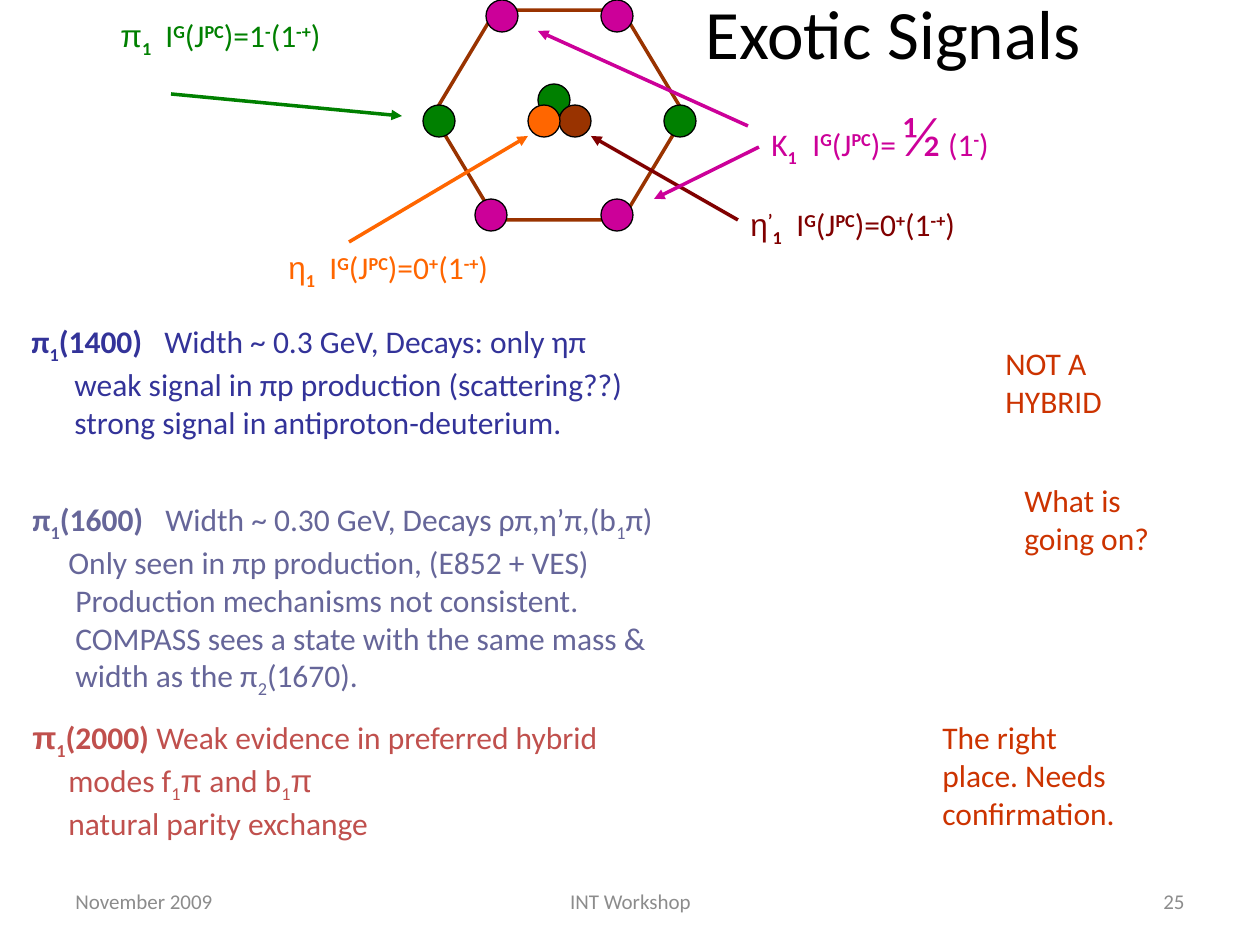
from lxml.etree import SubElement
from pptx import Presentation
from pptx.dml.color import RGBColor
from pptx.enum.shapes import MSO_CONNECTOR as Connector, MSO_SHAPE as Shape
from pptx.enum.text import MSO_ANCHOR as Anchor, MSO_AUTO_SIZE as Fit, PP_ALIGN as Align
from pptx.oxml.ns import qn
from pptx.util import Emu, Pt

PX = 7257
GREEN, MAROON, BROWN, ORANGE, MAGENTA = "008000", "800000", "993300", "FF6600", "CC0099"
NAVY, SLATE, BRICK, RED, GREY = "333399", "666699", "C0504D", "CC3300", "8C8C8C"

# Run styles: b bold, + superscript, - subscript, a Arial, L large.
TITLE = ("Exotic Signals", (636, 0, 514, 64))
FOOTERS = [
    ("November 2009", (63, 876, 294, 50), Align.LEFT),
    ("INT Workshop", (431, 876, 399, 50), Align.CENTER),
    ("25", (903, 876, 294, 50), Align.RIGHT),
]
MULTIPLETS = [
    ((108, 10, 364, 63), GREEN, 45, [("π", "a"), ("1", "b-")],
     [("1", ""), ("-", "b+")], "-+"),
    ((738, 199, 392, 63), MAROON, 46, [("η", "a"), ("’", "b+"), ("1", "b-")],
     [("0", ""), ("+", "b+")], "-+"),
    ((276, 242, 386, 63), ORANGE, 41, [("η", "a"), ("1", "b-")],
     [("0", ""), ("+", "b+")], "-+"),
    ((759, 94, 375, 79), MAGENTA, 41, [("K", ""), ("1", "b-")],
     [(" ", ""), ("½", "L"), (" ", "")], "-"),
]
HEXAGON = (433, 10, 252, 210)
DOT = 32
DOTS = [
    (601, 199, MAGENTA), (423, 105, GREEN), (538, 84, GREEN),
    (664, 105, GREEN), (559, 105, BROWN), (528, 105, ORANGE),
    (486, 0, MAGENTA), (601, 0, MAGENTA), (475, 199, MAGENTA),
]
ARROWS = [
    ((738, 220), (591, 136), MAROON),
    ((349, 242), (528, 136), ORANGE),
    ((759, 147), (654, 199), MAGENTA),
    ((748, 126), (538, 31), MAGENTA),
    ((171, 94), (402, 116), GREEN),
]
FINDINGS = [
    ((19, 316, 932, 164), NAVY, [
        (0, 133, [("π", "b"), ("1", "b-"), ("(1400)", "b"),
                  ("\tWidth ~ 0.3 GeV, Decays: only ηπ", "")]),
        (43, 0, [("weak signal in πp production (scattering??)", "")]),
        (43, 0, [("strong signal in antiproton-deuterium.", "")]),
    ]),
    ((20, 494, 666, 204), SLATE, [
        (0, 133, [("π", "b"), ("1", "b-"), ("(1600)", "b"),
                  ("\tWidth ~ 0.30 GeV, Decays ρπ,η’π,(b", ""), ("1", "-"), ("π)", "")]),
        (36, 0, [("Only seen in πp production, (E852 + VES)", "")]),
        (43, 0, [("Production mechanisms not consistent.", "")]),
        (43, 0, [("COMPASS sees a state with the same mass &", "")]),
        (43, 0, [("width as the π", ""), ("2", "-"), ("(1670).", "")]),
    ]),
    ((20, 712, 591, 127), BRICK, [
        (0, 0, [("π", "ab"), ("1", "b-"), ("(2000)", "b"),
                (" Weak evidence in preferred hybrid", "")]),
        (36, 0, [("modes f", ""), ("1", "-"), ("π", "a"), (" and b", ""),
                 ("1", "-"), ("π", "a")]),
        (36, 0, [("natural parity exchange", "")]),
    ]),
]
REMARKS = [
    ((993, 338, 190, 113), ["NOT A", "HYBRID"]),
    ((1012, 475, 160, 89), ["What is", "going on?"]),
    ((930, 712, 285, 164), ["The right", "place. Needs", "confirmation."]),
]


def px(*lengths):
    return [Emu(length * PX) for length in lengths]


def rgb(color):
    return RGBColor.from_string(color)


def apply(target, values):
    for name, value in values.items():
        setattr(target, name, value)


def write_run(paragraph, wording, style, color, size):
    run = paragraph.add_run()
    run.text = wording
    apply(run.font, {"name": "Arial" if "a" in style else "Calibri",
                     "size": Pt(32 if "L" in style else size), "bold": "b" in style})
    run.font.color.rgb = rgb(color)
    for mark, baseline in (("+", "30000"), ("-", "-25000")):
        if mark in style:
            run._r.get_or_add_rPr().set("baseline", baseline)


def add_text(slide, place, lines, color, size=18, align=Align.LEFT, anchor=Anchor.TOP):
    frame = slide.shapes.add_textbox(*px(*place)).text_frame
    apply(frame, {"word_wrap": True, "vertical_anchor": anchor})
    for number, (indent, tab, runs) in enumerate(lines):
        paragraph = frame.add_paragraph() if number else frame.paragraphs[0]
        paragraph.alignment = align
        properties = paragraph._p.get_or_add_pPr()
        if indent:
            properties.set("marL", str(indent * PX))
        if tab:
            stops = SubElement(properties, qn("a:tabLst"))
            SubElement(stops, qn("a:tab"), pos=str(tab * PX), algn="l")
        for wording, style in runs:
            write_run(paragraph, wording, style, color, size)


def add_outline(slide, kind, place, line_color, width, fill=None):
    shape = slide.shapes.add_shape(kind, *px(*place))
    shape.shadow.inherit = False
    if fill:
        shape.fill.solid()
        shape.fill.fore_color.rgb = rgb(fill)
    else:
        shape.fill.background()
    shape.line.color.rgb = rgb(line_color)
    shape.line.width = Pt(width)
    return shape


def add_arrow(slide, start, end, color):
    arrow = slide.shapes.add_connector(Connector.STRAIGHT, *px(*start, *end))
    arrow.line.color.rgb = rgb(color)
    arrow.line.width = Pt(2)
    SubElement(arrow.line._get_or_add_ln(), qn("a:tailEnd"), type="triangle")
    SubElement(arrow._element.spPr, qn("a:effectLst"))


def main():
    """Build the exotic signals slide."""
    deck = Presentation()
    deck.slide_width, deck.slide_height = px(1260, 945)
    slide = deck.slides.add_slide(deck.slide_layouts[5])

    heading, place = TITLE
    title = slide.shapes.title
    apply(title, dict(zip(("left", "top", "width", "height"), px(*place))))
    apply(title.text_frame, {"auto_size": Fit.NONE, "word_wrap": True,
                             "vertical_anchor": Anchor.MIDDLE})
    title.text_frame.paragraphs[0].alignment = Align.CENTER
    write_run(title.text_frame.paragraphs[0], heading, "", "000000", 39.6)

    for wording, place, align in FOOTERS:
        add_text(slide, place, [(0, 0, [(wording, "")])], GREY, 12, align, Anchor.MIDDLE)

    hexagon = add_outline(slide, Shape.HEXAGON, HEXAGON, BROWN, 2)
    hexagon.adjustments[0] = 0.3
    for left, top, color in DOTS:
        add_outline(slide, Shape.OVAL, (left, top, DOT, DOT), "000000", 0.75, color)

    for place, color, tab, symbol, isospin, parity in MULTIPLETS:
        runs = [*symbol, ("\tI", ""), ("G", "b+"), ("(J", ""), ("PC", "b+"), (")=", ""),
                *isospin, ("(1", ""), (parity, "b+"), (")", "")]
        add_text(slide, place, [(0, tab, runs)], color)
    for start, end, color in ARROWS:
        add_arrow(slide, start, end, color)

    for place, color, lines in FINDINGS:
        add_text(slide, place, lines, color)
    for place, lines in REMARKS:
        add_text(slide, place, [(0, 0, [(line, "")]) for line in lines], RED)

    deck.save("out.pptx")


if __name__ == "__main__":
    main()
